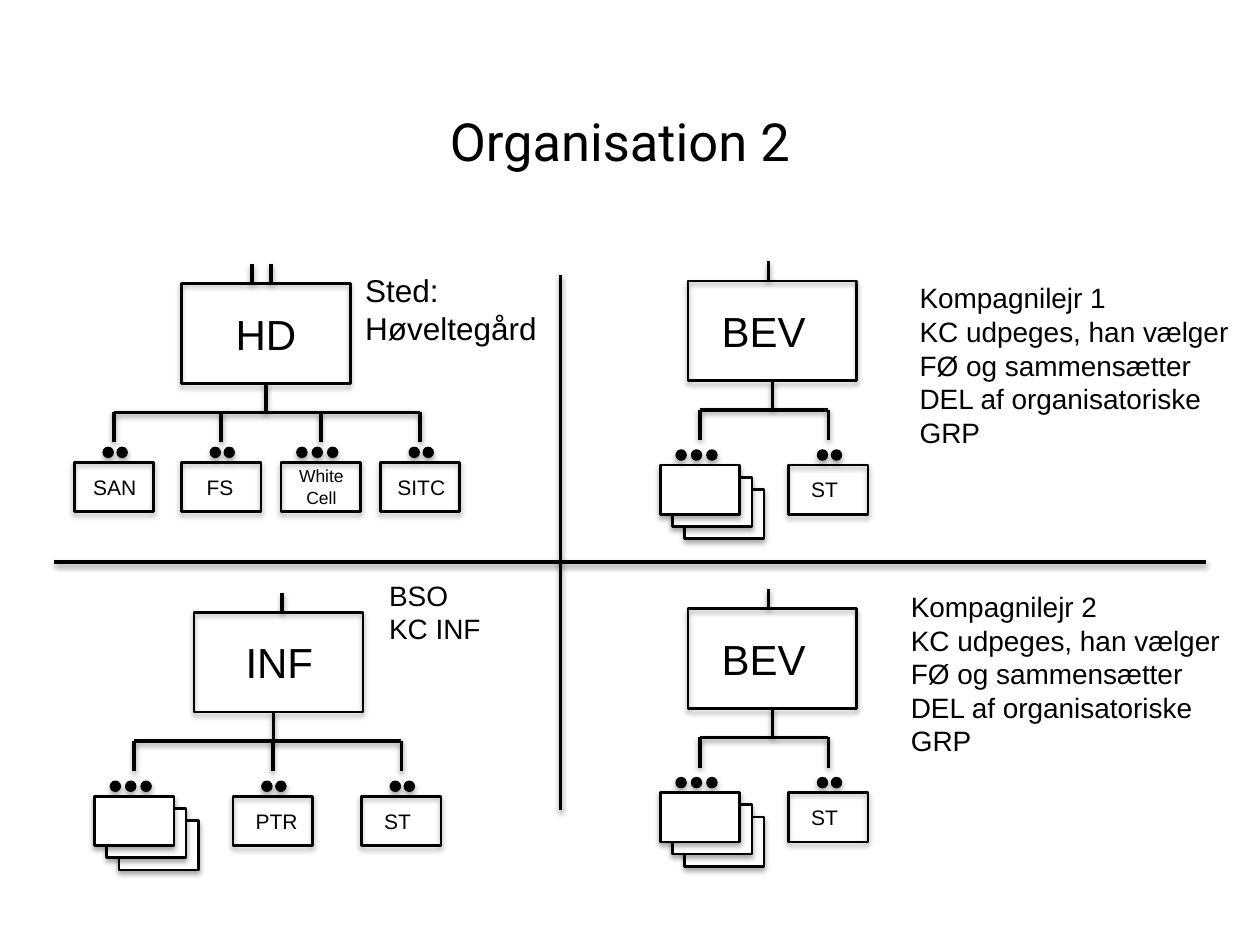
from lxml import etree
from pptx import Presentation
from pptx.dml.color import RGBColor
from pptx.enum.shapes import MSO_CONNECTOR, MSO_SHAPE
from pptx.enum.text import MSO_ANCHOR, PP_ALIGN
from pptx.oxml import parse_xml
from pptx.util import Pt

COLORS = {"ink": "000000", "paper": "FFFFFF"}
A_NS = "http://schemas.openxmlformats.org/drawingml/2006/main"

TITLE = "Organisation 2"
TASK = "KC udpeges, han vælger FØ og sammensætter DEL af organisatoriske GRP"

# Notes: paragraphs, size, left, top, width, height
NOTES = [
    (["Sted: Høveltegård"], 18, 201.6, 151.2, 136.1, 51.1),
    (["Kompagnilejr 1", TASK], 16, 518.4, 157, 195.8, 123.8),
    (["Kompagnilejr 2", TASK], 16, 513.4, 333.4, 195.8, 123.8),
    (["BSO", "KC INF"], 16, 215.3, 326.9, 82.1, 65.5),
]

# Dividing lines: x1, y1, x2, y2
AXES = [(320.4, 157, 320.4, 463), (689, 321.1, 31, 321.1)]

# Labels: text, size, offset from the box's left, width, height, alignment
HD = ("HD", 24, 23.8, 51.1, 36, PP_ALIGN.LEFT)
BEV = ("BEV", 24, 12.2, 73.4, 36, PP_ALIGN.LEFT)
INF = ("INF", 24, 22.3, 73.4, 36, PP_ALIGN.LEFT)
SAN = ("SAN", 12, 3.6, 39.6, 21.8, PP_ALIGN.LEFT)
FS = ("FS", 12, 2.2, 39.6, 21.8, PP_ALIGN.CENTER)
CELL = ("White Cell", 10, -0.7, 47.5, 31.7, PP_ALIGN.CENTER)
SITC = ("SITC", 12, 1.4, 43.9, 21.8, PP_ALIGN.CENTER)
PTR = ("PTR", 12, 5.8, 39.6, 21.8, PP_ALIGN.LEFT)
ST = ("ST", 12, 5.8, 33.8, 21.8, PP_ALIGN.LEFT)

# Each unit: left, number of dots, label (None for a stack of units)
BEV_UNITS = [(377.3, 3, None), (450.7, 2, ST)]
ORGS = [
    {"head": HD, "left": 103.7, "top": 162, "stubs": [40.3, 51.1], "lean": 0, "fall": 102.2,
     "units": [(42.5, 2, SAN), (103.7, 2, FS), (160.6, 3, CELL), (217.4, 2, SITC)]},
    {"head": BEV, "left": 393.1, "top": 160.6, "stubs": [46.1], "lean": 0, "fall": 105.1,
     "units": BEV_UNITS},
    {"head": INF, "left": 110.9, "top": 349.9, "stubs": [50.4], "lean": -2.9, "fall": 105.1,
     "units": [(54, 3, None), (133.2, 2, PTR), (206.6, 2, ST)]},
    {"head": BEV, "left": 393.1, "top": 347.8, "stubs": [46.1], "lean": 0, "fall": 105.1,
     "units": BEV_UNITS},
]

HEAD_W, HEAD_H = 96.5, 57
UNIT_W, UNIT_H = 45.4, 28.2
STUB, BAR, DROP = 11.2, 73.6, 17.2
DOT, RISE = 5.8, 8.6
DOT_ROWS = {2: (16.4, 8), 3: (9, 8.8)}  # count: first offset, pitch
STEP = 7


def color(name):
    return RGBColor.from_string(COLORS[name])


def shade(item, dist, alpha):
    """Give a shape or connector a soft shadow straight below it."""
    props = item._element.spPr
    for old in props.findall(f"{{{A_NS}}}effectLst"):
        props.remove(old)
    node = parse_xml(
        f'<a:effectLst xmlns:a="{A_NS}"><a:outerShdw blurRad="{Pt(3.1)}" dist="{Pt(dist)}" '
        f'dir="5400000" rotWithShape="0"><a:srgbClr val="{COLORS["ink"]}">'
        f'<a:alpha val="{alpha * 1000}"/></a:srgbClr></a:outerShdw></a:effectLst>')
    etree.SubElement(props, node.tag).extend(list(node))


def rule(shapes, x1, y1, x2, y2):
    line = shapes.add_connector(MSO_CONNECTOR.STRAIGHT, Pt(x1), Pt(y1), Pt(x2), Pt(y2))
    line.line.color.rgb = color("ink")
    line.line.width = Pt(2)
    shade(line, 1.6, 38)
    return line


def form(shapes, kind, left, top, width, height, weight=1.5, fill=None):
    item = shapes.add_shape(kind, Pt(left), Pt(top), Pt(width), Pt(height))
    if fill:
        item.fill.solid()
        item.fill.fore_color.rgb = color(fill)
    else:
        item.fill.background()
    item.line.color.rgb = color("ink")
    item.line.width = Pt(weight)
    shade(item, 1.8, 35)
    return item


def style(para, size, align, font="Arial"):
    para.alignment = align
    para.font.size = Pt(size)
    para.font.name = font
    para.font.color.rgb = color("ink")


def write(shapes, texts, size, left, top, width, height, align=PP_ALIGN.LEFT):
    frame = shapes.add_textbox(Pt(left), Pt(top), Pt(width), Pt(height)).text_frame
    frame.word_wrap = True
    for i, text in enumerate(texts):
        para = frame.add_paragraph() if i else frame.paragraphs[0]
        para.text = text
        style(para, size, align)


def label(shapes, data, left, top, room):
    """Write a label halfway down a box of the given height."""
    text, size, shift, width, height, align = data
    write(shapes, [text], size, left + shift, top + (room - height) / 2, width, height, align)


def draw_unit(shapes, left, top, dots, name):
    if name:
        form(shapes, MSO_SHAPE.RECTANGLE, left, top, UNIT_W, UNIT_H)
        label(shapes, name, left, top, UNIT_H)
    else:
        for i in (2, 1, 0):
            form(shapes, MSO_SHAPE.RECTANGLE, left + i * STEP, top + i * STEP,
                 UNIT_W, UNIT_H, fill="paper")
    first, pitch = DOT_ROWS[dots]
    for i in range(dots):
        form(shapes, MSO_SHAPE.OVAL, left + first + i * pitch, top - RISE,
             DOT, DOT, 0.75, "ink")


def draw_org(shapes, org):
    left, top = org["left"], org["top"]
    bar = top + BAR

    # Head box with its stubs and stem
    head = form(shapes, MSO_SHAPE.RECTANGLE, left, top, HEAD_W, HEAD_H)
    label(shapes, org["head"], left, top, HEAD_H)
    for shift in org["stubs"]:
        rule(shapes, left + shift, top - STUB, left + shift, top)
    mid = left + HEAD_W / 2 + org["lean"]
    stem = rule(shapes, mid, top + HEAD_H, mid, bar)
    if not org["lean"]:
        stem.begin_connect(head, 2)

    # Branches and units
    ends = [x + UNIT_W / 2 for x, _, _ in org["units"]]
    rule(shapes, ends[0], bar, ends[-1], bar)
    for end, (x, dots, name) in zip(ends, org["units"]):
        rule(shapes, end, bar, end, bar + DROP)
        draw_unit(shapes, x, top + org["fall"], dots, name)


def main():
    deck = Presentation()
    deck.slide_width, deck.slide_height = Pt(720), Pt(540)
    slide = deck.slides.add_slide(deck.slide_layouts[5])

    # Title
    title = slide.shapes.title
    title.left, title.top, title.width, title.height = Pt(70.6), Pt(49), Pt(567.4), Pt(62.6)
    title.text_frame.text = TITLE
    title.text_frame.vertical_anchor = MSO_ANCHOR.MIDDLE
    style(title.text_frame.paragraphs[0], 30, PP_ALIGN.CENTER, "Roboto")

    # Dividing lines, charts and notes
    for axis in AXES:
        rule(slide.shapes, *axis)
    for org in ORGS:
        draw_org(slide.shapes.add_group_shape().shapes, org)
    for note in NOTES:
        write(slide.shapes, *note)

    deck.save("out.pptx")


if __name__ == "__main__":
    main()
